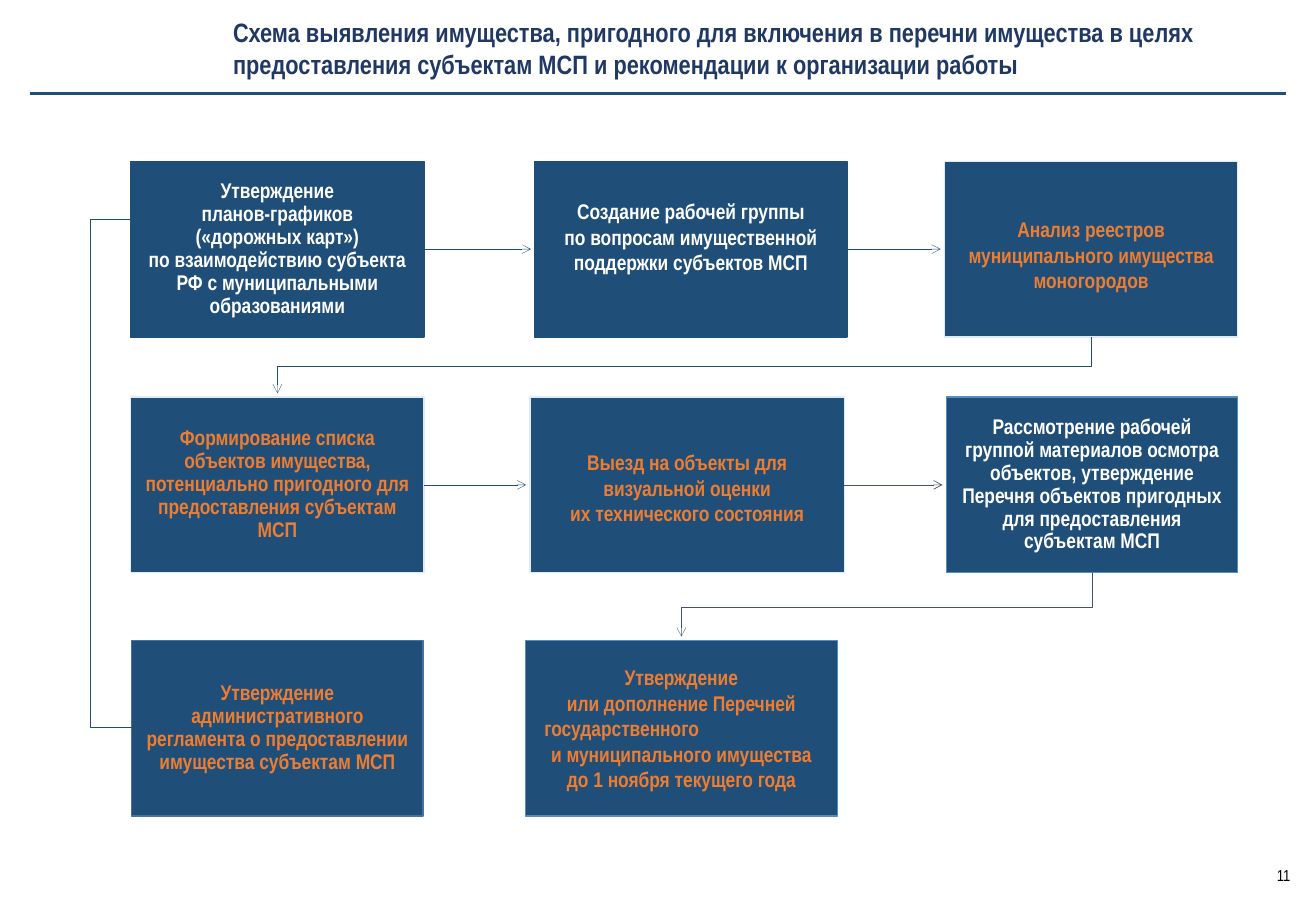
from lxml import etree
from pptx import Presentation
from pptx.dml.color import RGBColor
from pptx.enum import shapes, text
from pptx.oxml.ns import qn
from pptx.util import Inches, Pt

FONT = "Arial Narrow"
BLUE = RGBColor(0x1F, 0x4E, 0x79)
SLATE = RGBColor(0x44, 0x54, 0x6A)
PALE = RGBColor(0xDE, 0xEB, 0xF7)
SKY = RGBColor(0x53, 0x8D, 0xC1)
STEEL = RGBColor(0x43, 0x73, 0x9E)
NAVY = RGBColor(0x20, 0x38, 0x64)
ORANGE = RGBColor(0xED, 0x7D, 0x31)
WHITE = RGBColor(0xFF, 0xFF, 0xFF)
BLACK = RGBColor(0, 0, 0)
LEFT, CENTER, RIGHT = text.PP_ALIGN.LEFT, text.PP_ALIGN.CENTER, text.PP_ALIGN.RIGHT
TOP, MIDDLE = text.MSO_ANCHOR.TOP, text.MSO_ANCHOR.MIDDLE

ROWS = (1.69, 4.16, 6.71)
BOX_H = 1.84
GAP = 0.04  # between an arrowhead and the box it points at

# key: left, row, width, border, text colour, line spacing, format, paragraphs
STEPS = {
    "plans": (1.37, 0, 3.07, BLUE, WHITE, 0.9, {},
              ["Утверждение\vпланов-графиков\v(«дорожных карт»)\v"
               "по взаимодействию субъекта РФ с муниципальными образованиями"]),
    "group": (5.6, 0, 3.27, BLUE, WHITE, 1, {"bottom": 0.38},
              ["Создание рабочей группы\vпо вопросам имущественной поддержки субъектов МСП"]),
    "registers": (9.89, 0, 3.07, PALE, ORANGE, 1, {"top": 0.24},
                  ["Анализ реестров муниципального имущества моногородов"]),
    "list": (1.37, 1, 3.07, PALE, ORANGE, 0.9, {},
             ["Формирование списка объектов имущества, потенциально пригодного "
              "для предоставления субъектам МСП"]),
    "visit": (5.55, 1, 3.29, PALE, ORANGE, 1, {"top": 0.18, "side": 0.14},
              ["Выезд на объекты для визуальной оценки\vих технического состояния"]),
    "review": (9.91, 1, 3.05, SKY, WHITE, 0.9, {},
               ["Рассмотрение рабочей группой материалов осмотра объектов, утверждение "
                "Перечня объектов пригодных для предоставления субъектам МСП"]),
    "approval": (5.5, 2, 3.27, SKY, ORANGE, 1, {"side": 0.2},
                 ["Утверждение\vили дополнение Перечней", "государственного",
                  "и муниципального имущества", "до 1 ноября текущего года"]),
    "rules": (1.38, 2, 3.05, STEEL, ORANGE, 0.9, {},
              ["Утверждение административного регламента о предоставлении "
               "имущества субъектам МСП"]),
}


def write(tf, paragraphs, size=16, color=BLACK, bold=True, align=CENTER,
          spacing=1, anchor=MIDDLE, side=0.12, top=0.12, bottom=0.12):
    tf.auto_size = text.MSO_AUTO_SIZE.NONE
    tf.word_wrap = True
    tf.vertical_anchor = anchor
    tf.margin_left = tf.margin_right = Inches(side)
    tf.margin_top, tf.margin_bottom = Inches(top), Inches(bottom)
    for i, line in enumerate(paragraphs):
        p = tf.paragraphs[0] if i == 0 else tf.add_paragraph()
        p.text = line
        p.alignment = align
        p.line_spacing = spacing
        p.space_before = p.space_after = Pt(0)
        for r in p.runs:
            r.font.name, r.font.size, r.font.bold = FONT, Pt(size), bold
            r.font.color.rgb = color


def style_line(sp, color, width, arrow=False):
    sp.line.color.rgb = color
    sp.line.width = Pt(width)
    if arrow:
        etree.SubElement(sp.line._get_or_add_ln(), qn("a:tailEnd"), type="arrow")


def add_line(s, x1, y1, x2, y2, color=BLUE, width=0.25, arrow=False):
    sp = s.shapes.add_connector(shapes.MSO_CONNECTOR.STRAIGHT,
                                *map(Inches, (x1, y1, x2, y2)))
    style_line(sp, color, width, arrow)
    etree.SubElement(sp._element.spPr, qn("a:effectLst"))
    return sp


def add_route(s, points, color=BLUE, arrow=False):
    start, *rest = [(Inches(x), Inches(y)) for x, y in points]
    builder = s.shapes.build_freeform(*start)
    builder.add_line_segments(rest, close=False)
    sp = builder.convert_to_shape()
    sp.shadow.inherit = False
    sp.fill.background()
    style_line(sp, color, 0.25, arrow)


def add_header(s, left, top, width, height):
    title = s.shapes.title
    title.left, title.top, title.width, title.height = map(Inches, (left, top, width, height))
    write(title.text_frame,
          ["Схема выявления имущества, пригодного для включения в перечни имущества "
           "в целях предоставления субъектам МСП и рекомендации к организации работы"],
          size=20, color=NAVY, align=LEFT, anchor=TOP, side=0.1, top=0.05, bottom=0.05)
    add_line(s, 0.31, 0.98, 13.47, 0.98, width=1.75)


def add_step(s, left, row, width, border, color, spacing, fmt, paragraphs):
    sp = s.shapes.add_shape(shapes.MSO_SHAPE.RECTANGLE,
                            *map(Inches, (left, ROWS[row], width, BOX_H)))
    sp.shadow.inherit = False
    sp.fill.solid()
    sp.fill.fore_color.rgb = BLUE
    style_line(sp, border, 1)
    write(sp.text_frame, paragraphs, color=color, spacing=spacing, **fmt)
    return sp


def add_next_arrow(s, boxes, a, b, color=BLUE, width=0.25):
    left, row, w = STEPS[a][:3]
    y = ROWS[row] + BOX_H / 2
    sp = add_line(s, left + w, y, STEPS[b][0] - GAP, y, color, width, arrow=True)
    sp.begin_connect(boxes[a], 3)


def add_row_arrow(s, a, b, turn, color):
    (x1, row1, w1), (x2, row2, w2) = STEPS[a][:3], STEPS[b][:3]
    start, end = x1 + w1 / 2, x2 + w2 / 2
    add_route(s, [(start, ROWS[row1] + BOX_H), (start, turn), (end, turn),
                  (end, ROWS[row2] - GAP)], color, arrow=True)


def add_scheme(s):
    boxes = {key: add_step(s, *step) for key, step in STEPS.items()}
    # The third line of the approval step starts at the left
    boxes["approval"].text_frame.paragraphs[1].alignment = LEFT
    # Arrows within a row
    add_next_arrow(s, boxes, "plans", "group")
    add_next_arrow(s, boxes, "group", "registers")
    add_next_arrow(s, boxes, "list", "visit")
    add_next_arrow(s, boxes, "visit", "review", SLATE, 0.5)
    # Arrows to the next row
    add_row_arrow(s, "registers", "list", 3.84, BLUE)
    add_row_arrow(s, "review", "approval", 6.36, SLATE)
    # Side link from the plans to the rules
    add_route(s, [(1.37, 2.3), (0.94, 2.3), (0.94, 7.62), (1.38, 7.62)])


def add_page_number(s, left, top, width, height):
    sp = s.shapes.add_textbox(*map(Inches, (left, top, width, height)))
    write(sp.text_frame, ["11"], size=12, bold=False, align=RIGHT, spacing=0.8,
          anchor=TOP, side=0.1, top=0.05, bottom=0.05)


def main():
    prs = Presentation()
    prs.slide_width, prs.slide_height = Inches(13.78), Inches(9.45)
    s = prs.slides.add_slide(prs.slide_layouts[5])
    add_header(s, 2.34, 0.12, 10.94, 0.77)
    add_scheme(s)
    add_page_number(s, 12.96, 9.06, 0.65, 0.26)
    prs.save("out.pptx")


if __name__ == "__main__":
    main()
